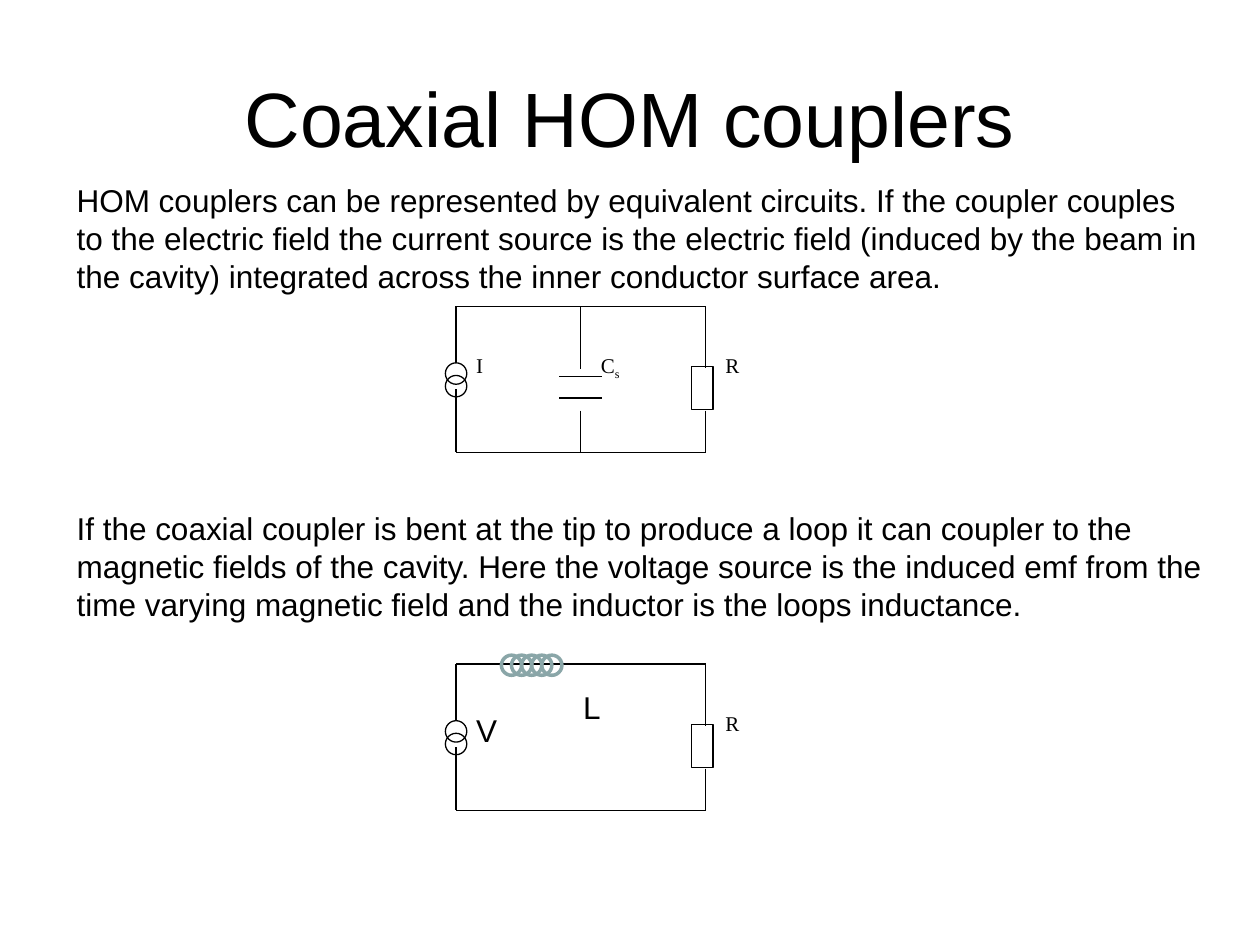
"""Build a slide on the equivalent circuits of coaxial HOM couplers."""
from pptx import Presentation
from pptx.dml.color import RGBColor
from pptx.enum.shapes import MSO_CONNECTOR as Connector, MSO_SHAPE as Shape
from pptx.enum.text import MSO_ANCHOR as Anchor, PP_ALIGN as Align
from pptx.oxml.ns import qn
from pptx.util import Inches, Pt
from lxml.etree import SubElement

COLORS = {"ink": "000000", "paper": "FFFFFF", "coil": "8AA6A8"}
SANS, SERIF = "Arial", "Times New Roman"

deck = Presentation()
deck.slide_width, deck.slide_height = Inches(10), Inches(7.5)
page = deck.slides.add_slide(deck.slide_layouts[5])


def write(box, text, size=18, font=SANS, align=Align.LEFT, anchor=Anchor.TOP, subscript=""):
    frame = box.text_frame
    frame.word_wrap = True
    frame.vertical_anchor = anchor
    para = frame.paragraphs[0]
    para.alignment = align
    for part in filter(None, (text, subscript)):
        span = para.add_run()
        span.text = part
        span.font.name, span.font.size = font, Pt(size)
        span.font.color.rgb = RGBColor.from_string(COLORS["ink"])
    if subscript:
        span._r.get_or_add_rPr().set("baseline", "-25000")


def draw(kind, left, top, width, height, fill=None, color="ink", weight=0.75):
    shape = page.shapes.add_shape(kind, *map(Inches, (left, top, width, height)))
    shape.shadow.inherit = False
    if fill:
        shape.fill.solid()
        shape.fill.fore_color.rgb = RGBColor.from_string(COLORS[fill])
    else:
        shape.fill.background()
    shape.line.color.rgb = RGBColor.from_string(COLORS[color])
    shape.line.width = Pt(weight)


title = page.shapes.title
title.left, title.top, title.width, title.height = map(Inches, (0.5, 0.3, 9, 1.25))
write(title, "Coaxial HOM couplers", size=44, align=Align.CENTER, anchor=Anchor.MIDDLE)

source, middle, load = 3.62, 4.61, 5.6
electric, magnetic = 2.43, 5.27
depth, ring = 1.16, 0.17

frame_wires = [
    (source, 0, load, 0),
    (source, 0, source, 0.45),
    (source, 0.66, source, depth),
    (load, 0, load, 0.49),
    (load, 0.83, load, depth),
    (source, depth, load, depth),
]
capacitor_wires = [
    (middle, 0, middle, 0.5),
    (middle - ring, 0.56, middle + ring, 0.56),
    (middle - ring, 0.73, middle + ring, 0.73),
    (middle, 0.83, middle, depth),
]

for top, wires in ((electric, frame_wires + capacitor_wires), (magnetic, frame_wires)):
    draw(Shape.OVAL, source - ring / 2, top + 0.45, ring, ring, fill="paper")
    draw(Shape.OVAL, source - ring / 2, top + 0.55, ring, ring)
    draw(Shape.RECTANGLE, load - 0.11, top + 0.48, ring, 2 * ring, fill="paper")
    for x1, y1, x2, y2 in wires:
        ends = map(Inches, (x1, top + y1, x2, top + y2))
        wire = page.shapes.add_connector(Connector.STRAIGHT, *ends)
        wire.line.color.rgb = RGBColor.from_string(COLORS["ink"])
        wire.line.width = Pt(0.75)
        SubElement(wire._element.spPr, qn("a:effectLst"))

for turn in range(5):
    draw(Shape.OVAL, 3.98 + 0.08 * turn, 5.2, 0.16, 0.16, color="coil", weight=2)

small = {"size": 12, "font": SERIF}
texts = [
    (0.51, 1.39, 9.13, 1, "HOM couplers can be represented by equivalent circuits. If the coupler "
     "couples to the electric field the current source is the electric field (induced by the beam "
     "in the cavity) integrated across the inner conductor surface area.", {}),
    (0.51, 3.99, 9.13, 1, "If the coaxial coupler is bent at the tip to produce a loop it can "
     "coupler to the magnetic fields of the cavity. Here the voltage source is the induced emf "
     "from the time varying magnetic field and the inductor is the loops inductance.", {}),
    (source + 0.06, electric + 0.32, 0.33, 0.5, "I", small),
    (middle + 0.06, electric + 0.32, 0.5, 0.5, "C", {**small, "subscript": "s"}),
    (load + 0.06, electric + 0.32, 0.5, 0.5, "R", small),
    (source + 0.06, magnetic + 0.32, 0.33, 0.5, "V", {}),
    (load + 0.06, magnetic + 0.32, 0.5, 0.5, "R", small),
    (4.53, 5.41, 0.39, 0.4, "L", {}),
]
for left, top, width, height, text, style in texts:
    box = page.shapes.add_textbox(*map(Inches, (left, top, width, height)))
    write(box, text, **style)

deck.save("out.pptx")
